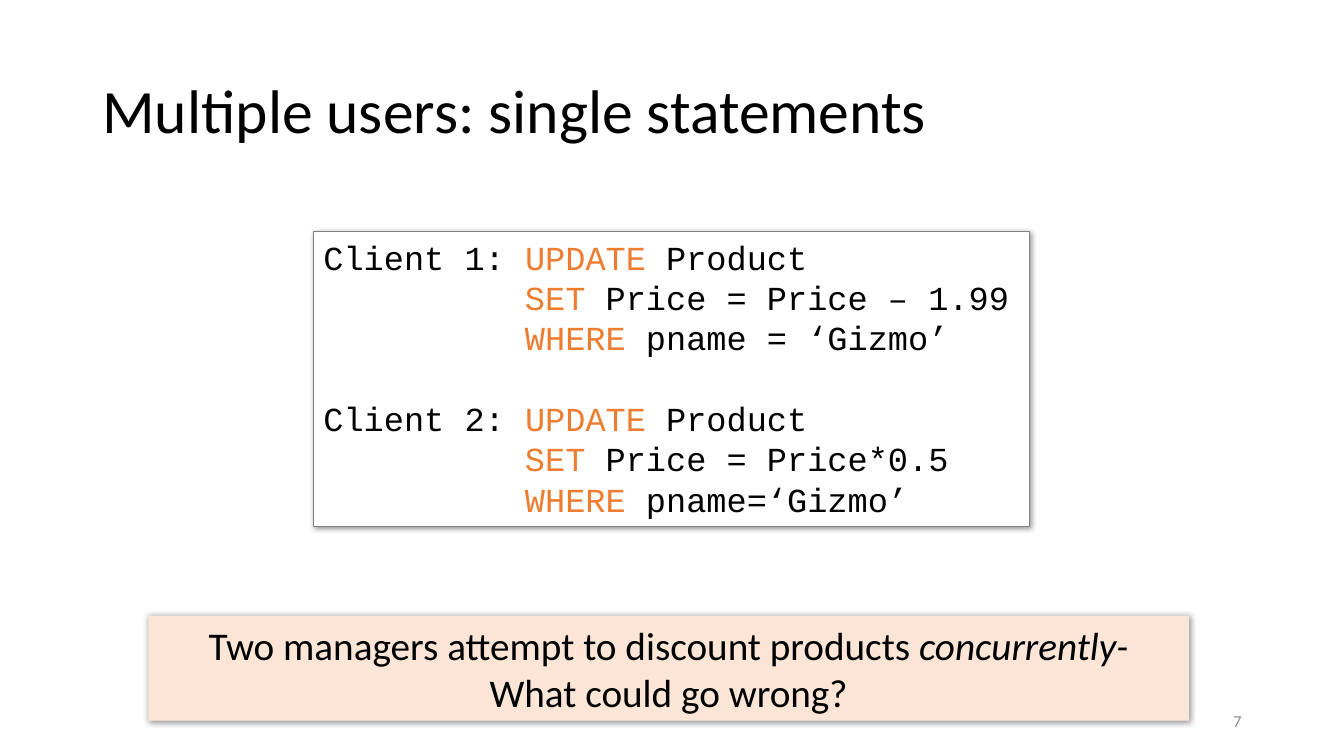
from dataclasses import dataclass, field
from typing import Any

import pptx
import pptx.dml.color
import pptx.enum.shapes
import pptx.enum.text
import pptx.oxml
import pptx.oxml.ns
import pptx.util

Pt = pptx.util.Pt
ALIGN = pptx.enum.text.PP_ALIGN
ANCHOR = pptx.enum.text.MSO_ANCHOR
RECT = pptx.enum.shapes.MSO_SHAPE.RECTANGLE

COLORS = {
    "white": "FFFFFF",
    "black": "000000",
    "gray": "808080",
    "pale": "8C8C8C",
    "orange": "ED7D31",
    "peach": "FBE5D6",
}
CODE_SIZE = 24
INDENT = len("Client 1: ") * CODE_SIZE * 0.6
GAP = 28.8


@dataclass
class Run:
    text: str
    color: str = "black"
    italic: bool = False


@dataclass
class Para:
    runs: list[Run]
    form: dict[str, Any] = field(default_factory=dict)
    indent: float = 0


@dataclass
class Box:
    place: tuple[float, float, float, float]
    paras: list[Para]
    size: float
    font: str = "Calibri"
    anchor: Any = ANCHOR.MIDDLE
    fill: str = ""
    line: str = ""


def rgb(name: str) -> pptx.dml.color.RGBColor:
    return pptx.dml.color.RGBColor.from_string(COLORS[name])


def apply(target: Any, form: dict[str, Any]) -> None:
    """Set each named format value on the target."""
    for name, value in form.items():
        setattr(target, name, value)


def shade(shape: Any) -> None:
    """Give the shape a soft shadow to the lower right."""
    shape.shadow.inherit = False
    effects = shape._element.spPr.find(pptx.oxml.ns.qn("a:effectLst"))
    effects.append(pptx.oxml.parse_xml(
        f'<a:outerShdw {pptx.oxml.ns.nsdecls("a")} blurRad="{Pt(4)}" dist="{Pt(1)}" '
        f'dir="2700000" algn="tl" rotWithShape="0"><a:srgbClr val="{COLORS["black"]}">'
        '<a:alpha val="40000"/></a:srgbClr></a:outerShdw>'))


def paint(shape: Any, box: Box) -> None:
    shape.fill.solid()
    shape.fill.fore_color.rgb = rgb(box.fill)
    if box.line:
        shape.line.color.rgb = rgb(box.line)
        shape.line.width = Pt(0.75)
    else:
        shape.line.fill.background()
    shade(shape)


def draw(slide: Any, box: Box) -> None:
    place = [Pt(value) for value in box.place]
    if box.fill:
        shape = slide.shapes.add_shape(RECT, *place)
        paint(shape, box)
    else:
        shape = slide.shapes.add_textbox(*place)
    frame = shape.text_frame
    apply(frame, {"word_wrap": True, "vertical_anchor": box.anchor})
    for index, item in enumerate(box.paras):
        para = frame.add_paragraph() if index else frame.paragraphs[0]
        apply(para, {"alignment": ALIGN.LEFT} | item.form)
        if item.indent:
            para._p.get_or_add_pPr().set("marL", str(Pt(item.indent)))
        for part in item.runs:
            run = para.add_run()
            run.text = part.text
            apply(run.font, {"name": box.font, "size": Pt(box.size), "italic": part.italic})
            run.font.color.rgb = rgb(part.color)


def query(client: int, price: str, where: str) -> list[Para]:
    """Lay out one client's UPDATE statement."""
    head = Para([Run(f"Client {client}: "), Run("UPDATE", "orange"), Run(" Product")])
    if client > 1:
        head.form["space_before"] = Pt(GAP)
    tail = [
        Para([Run(word, "orange"), Run(f" {rest}")], indent=INDENT)
        for word, rest in (("SET", price), ("WHERE", where))
    ]
    return [head, *tail]


def main() -> None:
    deck = pptx.Presentation()
    apply(deck, {"slide_width": Pt(960), "slide_height": Pt(540)})
    slide = deck.slides.add_slide(deck.slide_layouts[6])
    center = {"alignment": ALIGN.CENTER}
    boxes = [
        Box((678, 500.5, 216, 28.8), [Para([Run("7", "pale")], {"alignment": ALIGN.RIGHT})], 12),
        Box((66, 28.8, 828, 104.4),
            [Para([Run("Multiple users: single statements")], {"line_spacing": 0.9})], 44),
        Box((223.9, 165.5, 511.4, 210.7),
            query(1, "Price = Price – 1.99", "pname = ‘Gizmo’")
            + query(2, "Price = Price*0.5", "pname=‘Gizmo’"),
            CODE_SIZE, "Courier New", ANCHOR.TOP, "white", "gray"),
        Box((106, 439.8, 743.2, 75),
            [Para([Run("Two managers attempt to discount products "),
                   Run("concurrently-", italic=True)], center),
             Para([Run("What could go wrong?")], center)],
            28, fill="peach"),
    ]
    for box in boxes:
        draw(slide, box)
    deck.save("out.pptx")


if __name__ == "__main__":
    main()
